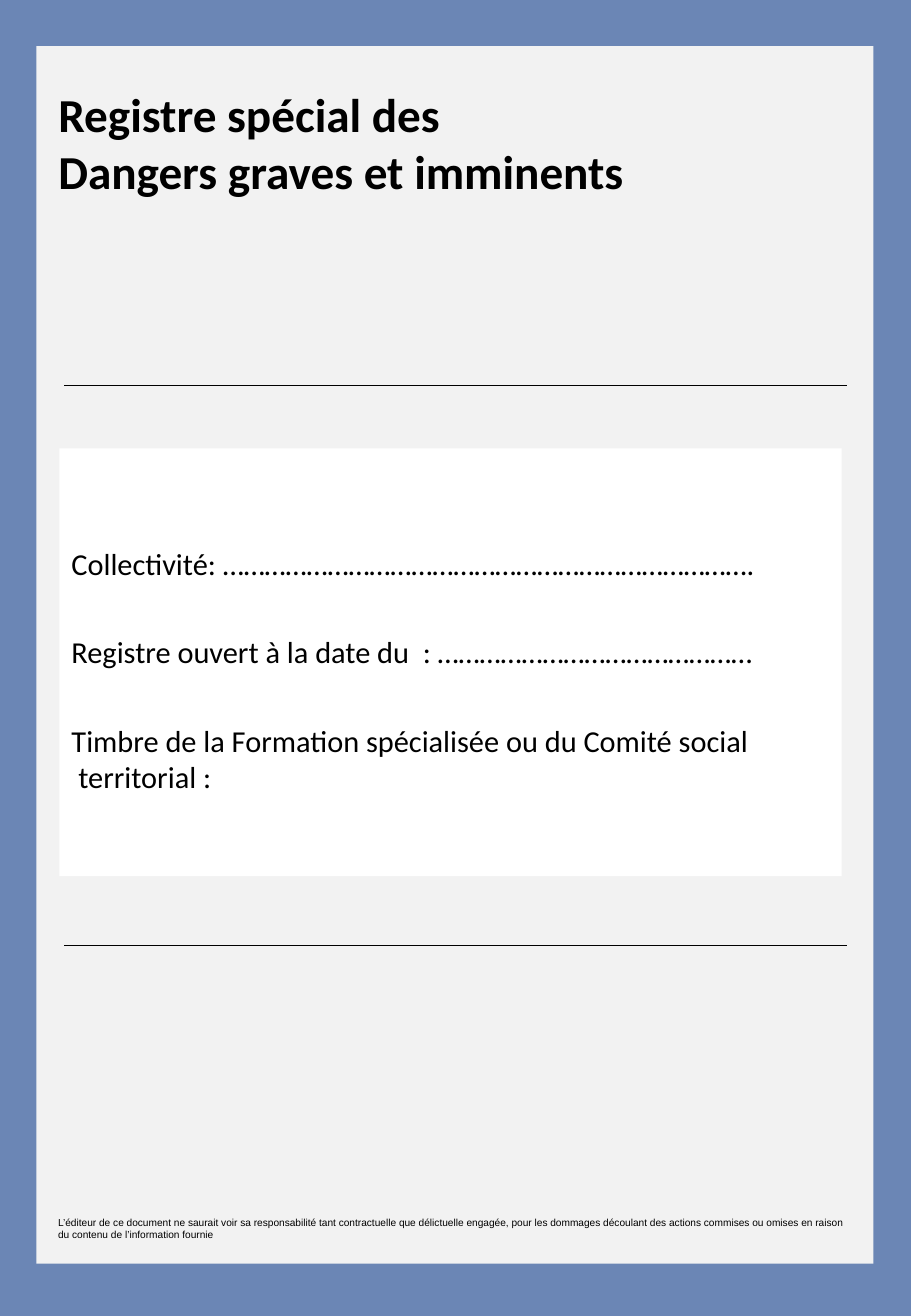
from lxml import etree
from pptx import Presentation
from pptx.dml.color import RGBColor
from pptx.enum import shapes, text
from pptx.oxml import ns
from pptx.util import Inches, Pt

COLORS = {
    "frame": "6B86B5",
    "panel": "F2F2F2",
    "card": "FFFFFF",
    "ink": "000000",
}
TITLE = ["Registre spécial des", "Dangers graves et imminents"]
FIELDS = [
    (6.07, 0.4, ["Collectivité: …………………………………………………………………."]),
    (6.89, 0.4, ["Registre ouvert à la date du  : ………………………………………"]),
    (6.89, 0.71, ["Timbre de la Formation spécialisée ou du Comité social", " territorial :"]),
]
FIELD_TOP, FIELD_STEP = 4.44, 0.725
DISCLAIMER = (
    "L’éditeur de ce document ne saurait voir sa responsabilité tant contractuelle "
    "que délictuelle engagée, pour les dommages découlant des actions commises ou "
    "omises en raison du contenu de l’information fournie"
)


def color(name):
    return RGBColor.from_string(COLORS[name])


def write_text(shape, lines, size, font="Calibri", bold=False):
    """Fill a shape with one left-aligned paragraph per line."""
    frame = shape.text_frame
    frame.text = "\n".join(lines)
    frame.word_wrap = True
    frame.auto_size = text.MSO_AUTO_SIZE.NONE
    frame.vertical_anchor = text.MSO_ANCHOR.TOP
    for paragraph in frame.paragraphs:
        paragraph.alignment = text.PP_ALIGN.LEFT
        paragraph.font.size = Pt(size)
        paragraph.font.name = font
        paragraph.font.bold = bold
        paragraph.font.color.rgb = color("ink")


def add_text(slide, left, top, width, height, lines, **style):
    box = slide.shapes.add_textbox(
        Inches(left), Inches(top), Inches(width), Inches(height))
    write_text(box, lines, **style)


def add_rectangle(slide, left, top, width, height, fill):
    shape = slide.shapes.add_shape(
        shapes.MSO_SHAPE.RECTANGLE,
        Inches(left), Inches(top), Inches(width), Inches(height))
    shape.shadow.inherit = False
    shape.fill.solid()
    shape.fill.fore_color.rgb = color(fill)
    shape.line.fill.background()
    return shape


def add_rule(slide, top):
    rule = slide.shapes.add_connector(
        shapes.MSO_CONNECTOR.STRAIGHT,
        Inches(0.53), Inches(top), Inches(6.97), Inches(top))
    rule.line.color.rgb = color("ink")
    rule.line.width = Pt(0.75)
    etree.SubElement(rule.element.spPr, ns.qn("a:effectLst"))


def place_title(slide):
    title = slide.shapes.title
    title.left, title.top = Inches(0.38), Inches(0.65)
    title.width, title.height = Inches(6.29), Inches(1.04)
    write_text(title, TITLE, size=28, bold=True)
    return title


def main():
    presentation = Presentation()
    presentation.slide_width = Inches(7.5)
    presentation.slide_height = Inches(10.83)
    slide = presentation.slides.add_slide(presentation.slide_layouts[5])
    slide.background.fill.solid()
    slide.background.fill.fore_color.rgb = color("frame")

    title = place_title(slide)
    panel = add_rectangle(slide, 0.3, 0.38, 6.89, 10.02, "panel")
    title.element.addprevious(panel.element)  # the title stays in front
    add_text(slide, 0.38, 9.96, 6.74, 0.3, [DISCLAIMER], size=6, font="Arial")

    for top in (3.17, 7.78):
        add_rule(slide, top)
    add_rectangle(slide, 0.49, 3.69, 6.44, 3.52, "card")
    for index, (width, height, lines) in enumerate(FIELDS):
        top = FIELD_TOP + index * FIELD_STEP
        add_text(slide, 0.49, top, width, height, lines, size=18)

    presentation.save("out.pptx")


if __name__ == "__main__":
    main()
